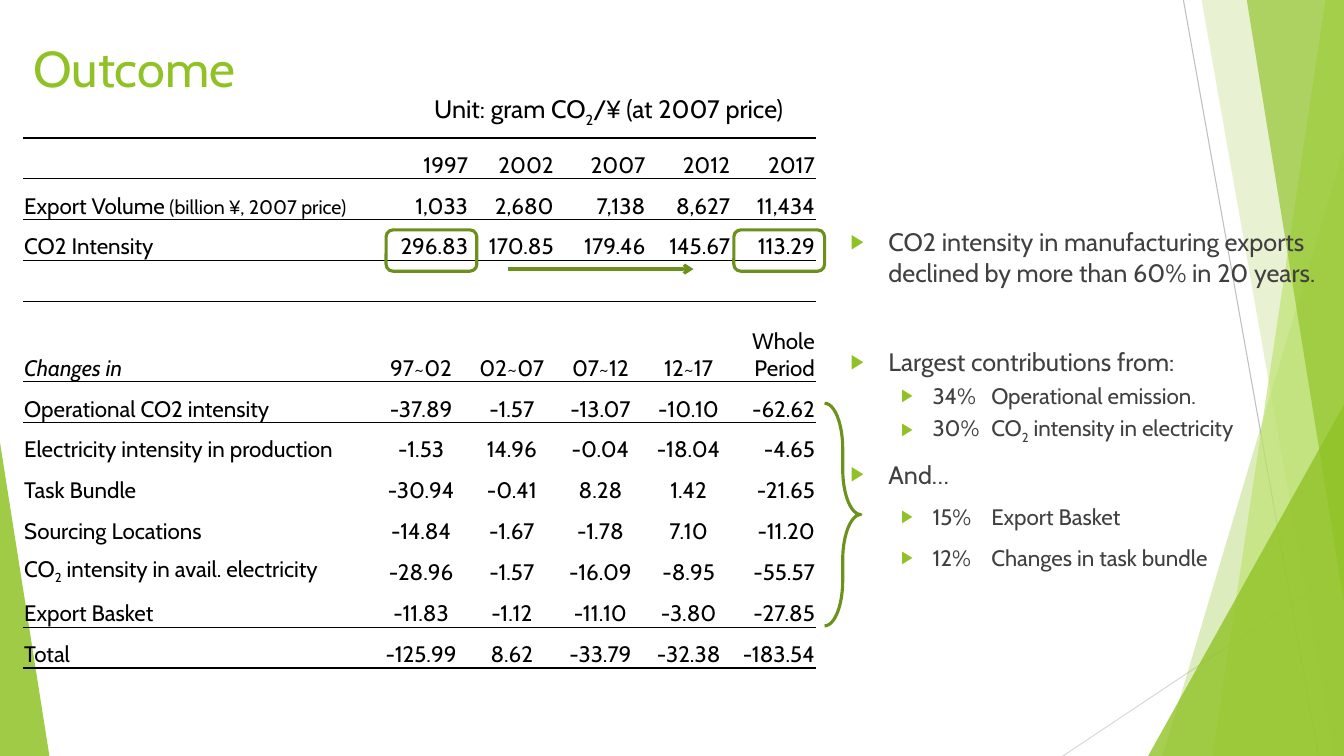
"""Build the Outcome slide: CO2 intensity table, takeaways and green facets."""
from dataclasses import dataclass

from lxml import etree
from pptx import Presentation
from pptx import util as u
from pptx.dml.color import RGBColor
from pptx.enum import shapes, text
from pptx.oxml import ns

Pt = u.Pt


@dataclass(frozen=True)
class Theme:
    font: str = "Cabin"
    symbol_font: str = "Arial"
    green: str = "90C226"
    pale_green: str = "C0E474"
    frame: str = "6B901C"
    mark: str = "6C921D"
    ink: str = "000000"
    body: str = "404040"
    grey: str = "BFBFBF"
    light_grey: str = "D9D9D9"
    title_size: float = 36
    large: float = 18
    medium: float = 16
    small: float = 14
    thick: float = 2
    thin: float = 0.5
    hairline: float = 0.75
    stroke: float = 2.25


T = Theme()
SUB, SYMBOL, SMALL, ITALIC = "sub", "symbol", "small", "italic"

TITLE = ["Outcome"]
UNIT = ["Unit: gram CO", ("2", SUB), "/", ("¥", SYMBOL), " (at 2007 price)"]
ROWS = [
    ([], "1997", "2002", "2007", "2012", "2017"),
    (["Export Volume", (" (billion ", SMALL), ("¥", SMALL, SYMBOL), (", 2007 price)", SMALL)],
     "1,033", "2,680", "7,138", "8,627", "11,434"),
    (["CO2 Intensity"], "296.83", "170.85", "179.46", "145.67", "113.29"),
    ([], "", "", "", "", ""),
    ([("Changes in", ITALIC)], "97~02", "02~07", "07~12", "12~17", "Whole Period"),
    (["Operational CO2 intensity"], "-37.89", "-1.57", "-13.07", "-10.10", "-62.62"),
    (["Electricity intensity in production"], "-1.53", "14.96", "-0.04", "-18.04", "-4.65"),
    (["Task Bundle"], "-30.94", "-0.41", "8.28", "1.42", "-21.65"),
    (["Sourcing Locations"], "-14.84", "-1.67", "-1.78", "7.10", "-11.20"),
    (["CO", ("2", SUB), " intensity in avail. electricity"],
     "-28.96", "-1.57", "-16.09", "-8.95", "-55.57"),
    (["Export Basket"], "-11.83", "-1.12", "-11.10", "-3.80", "-27.85"),
    (["Total"], "-125.99", "8.62", "-33.79", "-32.38", "-183.54"),
]
COLUMNS = [250, 68.4, 61.2, 65.4, 60.6, 60.6]
ROW_HEIGHT, HEADING_ROW, HEADING_HEIGHT = 29.2, 4, 57.4
RULES = {0: T.thick, 1: T.thin, 3: T.thin, 5: T.thin, 11: T.thin, 12: T.thick}

TAKEAWAYS = [
    (0, 0, ["CO2 intensity in manufacturing exports declined by more than 60% in 20 years."]),
    (0, 42, ["Largest contributions from:"]),
    (1, 4, ["34%\tOperational emission."]),
    (1, 4, ["30%\tCO", ("2", SUB), " intensity in electricity"]),
    (0, 10, ["And…"]),
    (1, 10, ["15%\tExport Basket"]),
    (1, 10, ["12%\tChanges in task bundle"]),
]
LEVELS = [(27, -27, T.large), (58.5, -22.5, T.medium)]
TAB_STOP = 100.5

BACK_LINES = [((845.3, 0), (941.8, 540), T.grey), ((1129, 293.8), (753.8, 543.6), T.light_grey)]
FACETS = [
    ([(990.7, 2.9), (1066.3, 2.9), (1066.3, 543.6), (829.4, 543.6)], T.green, 30),
    ([(858.2, -0.7), (1062, -0.7), (1062, 540), (953.3, 540)], T.green, 20),
    ([(946.8, -0.7), (967.7, -0.7), (967.7, 540), (866.2, 540)], T.pale_green, 70),
    ([(890.6, 0), (989.3, 0), (989.3, 540.7), (977.8, 540.7)], T.green, 65),
]
CORNERS = [((820.1, 283, 143.3, 257), 1, 80), ((0, 316.1, 35.3, 223.9), 0, 85)]
HIGHLIGHT_LEFTS = [275.8, 524.2]


def rgb(value):
    return RGBColor.from_string(value)


def node(parent, tag, **attrs):
    return etree.SubElement(parent, ns.qn(tag), {k: str(v) for k, v in attrs.items()})


def paint(sp, color, opacity):
    sp.shadow.inherit = False
    sp.line.fill.background()
    sp.fill.solid()
    sp.fill.fore_color.rgb = rgb(color)
    node(sp.fill._xPr.find(".//" + ns.qn("a:srgbClr")), "a:alpha", val=opacity * 1000)


def outline(s, kind, box, color):
    sp = s.shapes.add_shape(kind, *map(Pt, box))
    sp.shadow.inherit = False
    sp.fill.background()
    sp.line.color.rgb = rgb(color)
    sp.line.width = Pt(T.stroke)
    return sp


def add_line(s, start, end, color, width):
    line = s.shapes.add_connector(shapes.MSO_CONNECTOR.STRAIGHT, *map(Pt, start + end))
    line.line.color.rgb = rgb(color)
    line.line.width = Pt(width)
    node(line._element.spPr, "a:effectLst")
    return line


def add_runs(p, parts, size, color):
    for part in parts:
        words, *marks = (part,) if isinstance(part, str) else part
        r = p.add_run()
        r.text = words
        r.font.name = T.symbol_font if SYMBOL in marks else T.font
        r.font.size = Pt(T.small if SMALL in marks else size)
        r.font.color.rgb = rgb(color)
        if ITALIC in marks:
            r.font.italic = True
        if SUB in marks:
            r._r.get_or_add_rPr().set("baseline", "-25000")


def add_text(s, box, wrap=True, anchor=text.MSO_ANCHOR.TOP):
    tf = s.shapes.add_textbox(*map(Pt, box)).text_frame
    tf.word_wrap = wrap
    tf.vertical_anchor = anchor
    return tf


def add_backdrop(s):
    for start, end, color in BACK_LINES:
        add_line(s, start, end, color, T.hairline)
    for points, color, opacity in FACETS:
        first, *rest = [(Pt(x), Pt(y)) for x, y in points]
        builder = s.shapes.build_freeform(*first)
        builder.add_line_segments(rest, close=True)
        paint(builder.convert_to_shape(), color, opacity)
    for box, apex, opacity in CORNERS:
        sp = s.shapes.add_shape(shapes.MSO_SHAPE.ISOSCELES_TRIANGLE, *map(Pt, box))
        sp.adjustments[0] = apex
        paint(sp, T.green, opacity)


def add_rule(cell, index, tag, width):
    ln = etree.Element(ns.qn(tag), w=str(int(Pt(width))))
    node(node(ln, "a:solidFill"), "a:srgbClr", val=T.ink)
    cell._tc.get_or_add_tcPr().insert(index, ln)


def fill_cell(cell, row, col, parts):
    cell.fill.background()
    cell.margin_left = cell.margin_right = cell.margin_top = Pt(0.72)
    cell.margin_bottom = 0
    cell.vertical_anchor = text.MSO_ANCHOR.BOTTOM
    p = cell.text_frame.paragraphs[0]
    if col:
        centred = row >= HEADING_ROW and col < len(COLUMNS) - 1
        p.alignment = text.PP_ALIGN.CENTER if centred else text.PP_ALIGN.RIGHT
    add_runs(p, parts, T.medium, T.ink)
    sides = [(tag, RULES[edge]) for tag, edge in (("a:lnT", row), ("a:lnB", row + 1)) if edge in RULES]
    for index, (tag, width) in enumerate(sides):
        add_rule(cell, index, tag, width)


def add_results(s):
    heights = [HEADING_HEIGHT if i == HEADING_ROW else ROW_HEIGHT for i in range(len(ROWS))]
    size = (sum(COLUMNS), sum(heights))
    frame = s.shapes.add_table(len(ROWS), len(COLUMNS), *map(Pt, (16.6, 98.5) + size))
    table = frame.table
    table.first_row = table.horz_banding = False
    style = frame._element.find(".//" + ns.qn("a:tableStyleId"))
    style.text = "{2D5ABB26-0587-4C30-8999-92F81FD0307C}"
    for col, width in enumerate(COLUMNS):
        table.columns[col].width = Pt(width)
    for row, (label, *values) in enumerate(ROWS):
        table.rows[row].height = Pt(heights[row])
        for col, parts in enumerate([label] + [[v] if v else [] for v in values]):
            fill_cell(table.cell(row, col), row, col, parts)


def add_takeaways(s):
    tf = add_text(s, (600.5, 158.4, 373.7, 305.3))
    for i, (level, before, parts) in enumerate(TAKEAWAYS):
        p = tf.add_paragraph() if i else tf.paragraphs[0]
        margin, indent, size = LEVELS[level]
        p.level = level
        p.space_before = Pt(before)
        pPr = p._p.get_or_add_pPr()
        pPr.set("marL", str(int(Pt(margin))))
        pPr.set("indent", str(int(Pt(indent))))
        node(node(pPr, "a:buClr"), "a:srgbClr", val=T.green)
        node(pPr, "a:buSzPct", val=80000)
        node(pPr, "a:buFont", typeface=T.symbol_font)
        node(pPr, "a:buChar", char="▶")
        if level:
            node(node(pPr, "a:tabLst"), "a:tab", pos=int(Pt(TAB_STOP)), algn="l")
        add_runs(p, parts, size, T.body)


def main():
    prs = Presentation()
    prs.slide_width, prs.slide_height = Pt(960), Pt(540)
    s = prs.slides.add_slide(prs.slide_layouts[6])
    add_backdrop(s)
    title = add_text(s, (16.6, 19.4, 676.8, 57.6), anchor=text.MSO_ANCHOR.MIDDLE)
    add_runs(title.paragraphs[0], TITLE, T.title_size, T.green)
    add_takeaways(s)
    add_results(s)
    for left in HIGHLIGHT_LEFTS:
        outline(s, shapes.MSO_SHAPE.ROUNDED_RECTANGLE, (left, 164.2, 64.8, 29.5), T.frame)
    arrow = add_line(s, (362.9, 192.2), (495.4, 192.2), T.mark, T.stroke)
    node(arrow.line._get_or_add_ln(), "a:tailEnd", type="arrow")
    unit = add_text(s, (303.1, 63.4, 285.8, 28.8), wrap=False)
    add_runs(unit.paragraphs[0], UNIT, T.large, T.ink)
    brace = outline(s, shapes.MSO_SHAPE.RIGHT_BRACE, (589, 288, 25.9, 159.1), T.mark)
    brace.adjustments[0] = 1.255
    prs.save("out.pptx")


if __name__ == "__main__":
    main()
